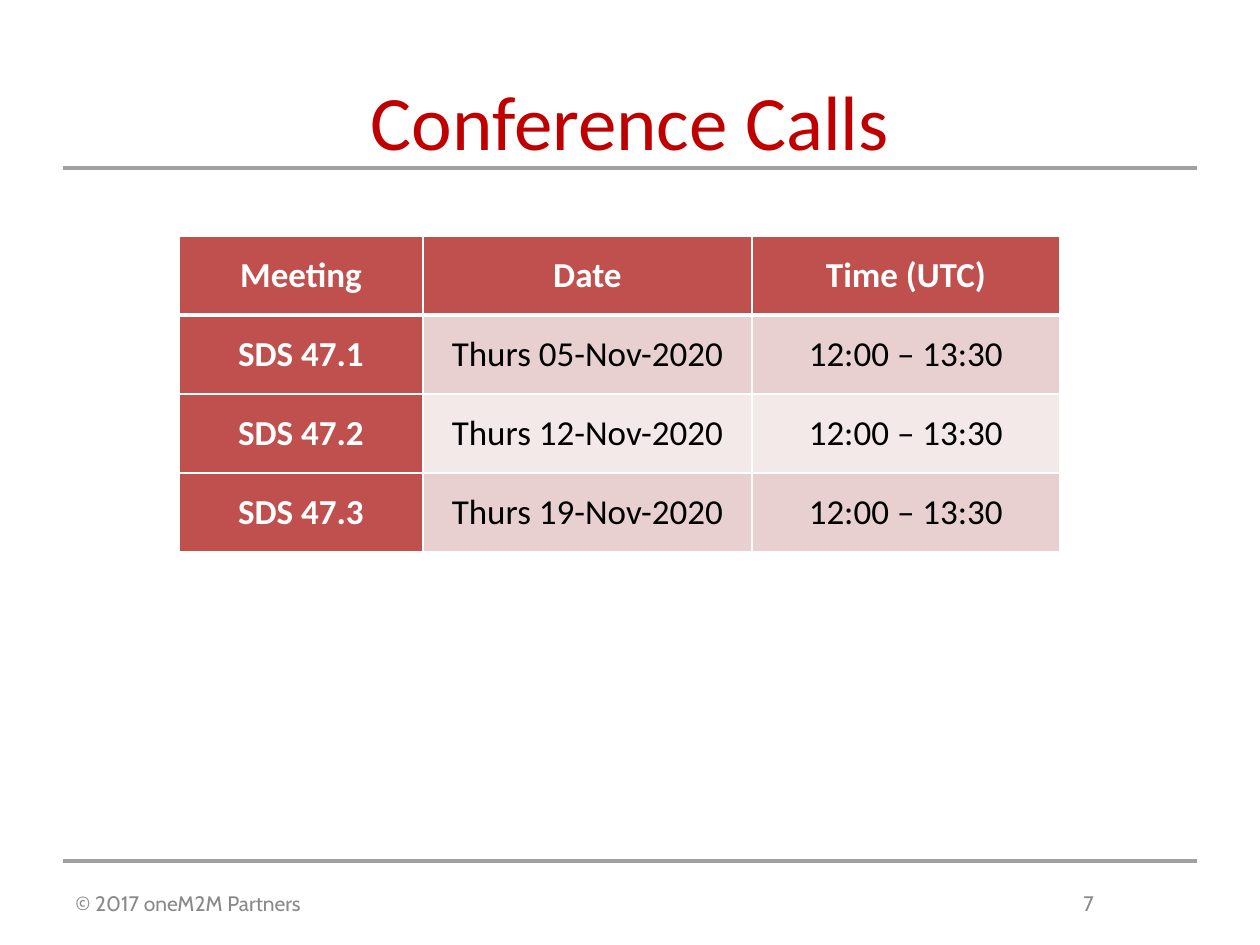
from dataclasses import dataclass

from lxml.etree import SubElement
from pptx import Presentation
from pptx.dml.color import RGBColor
from pptx.enum.shapes import MSO_CONNECTOR
from pptx.enum.text import MSO_ANCHOR, PP_ALIGN
from pptx.oxml.ns import qn
from pptx.slide import Slide
from pptx.table import _Cell
from pptx.text.text import TextFrame
from pptx.util import Emu, Pt

PIXELS_PER_INCH = 126
WHITE, BLACK, RED, GREY = "FFFFFF", "000000", "C0504D", "898989"
BANDS = ("E8D0D0", "F4E9E9")
COLUMN_WIDTHS = (244, 329, 308)
ROW_HEIGHT = 79
MEETINGS = (
    ("Meeting", "Date", "Time (UTC)"),
    ("SDS 47.1", "Thurs 05-Nov-2020", "12:00 – 13:30"),
    ("SDS 47.2", "Thurs 12-Nov-2020", "12:00 – 13:30"),
    ("SDS 47.3", "Thurs 19-Nov-2020", "12:00 – 13:30"),
)


@dataclass(frozen=True)
class TextStyle:
    size: int
    color: str
    name: str = "Calibri"
    bold: bool = False
    alignment: PP_ALIGN = PP_ALIGN.CENTER


@dataclass(frozen=True)
class Rule:
    left: int
    right: int
    top: int


RULES = (Rule(63, 1197, 168), Rule(63, 1197, 861))


def px(length: int) -> Emu:
    return Emu(round(length * 914400 / PIXELS_PER_INCH))


def rgb(color: str) -> RGBColor:
    return RGBColor.from_string(color)


def apply_format(target: object, values: dict) -> None:
    for name, value in values.items():
        setattr(target, name, value)


def write_text(frame: TextFrame, text: str, style: TextStyle) -> None:
    para = frame.paragraphs[0]
    para.alignment = style.alignment
    span = para.add_run()
    span.text = text
    apply_format(span.font, {"name": style.name, "size": Pt(style.size), "bold": style.bold})
    span.font.color.rgb = rgb(style.color)


def draw_rule(page: Slide, rule: Rule) -> None:
    line = page.shapes.add_connector(
        MSO_CONNECTOR.STRAIGHT, px(rule.left), px(rule.top), px(rule.right), px(rule.top)
    )
    line.line.color.rgb = rgb("A0A0A3")
    line.line.width = Pt(1.75)
    SubElement(line._element.spPr, qn("a:effectLst"))


def draw_title(page: Slide, text: str) -> None:
    title = page.shapes.title
    apply_format(title, {"left": px(63), "top": px(63), "width": px(1134), "height": px(158)})
    apply_format(title.text_frame, {"vertical_anchor": MSO_ANCHOR.TOP, "margin_top": px(10)})
    write_text(title.text_frame, text, TextStyle(44, "C00000"))


def draw_footer(page: Slide, notice: str, number: int) -> None:
    box = page.shapes.add_textbox(px(63), px(861), px(1134), px(84))
    frame = box.text_frame
    apply_format(frame, {"word_wrap": True, "vertical_anchor": MSO_ANCHOR.MIDDLE})
    properties = frame.paragraphs[0]._p.get_or_add_pPr()
    tabs = SubElement(properties, qn("a:tabLst"))
    SubElement(tabs, qn("a:tab"), pos=str(px(1008)), algn="l")
    style = TextStyle(12, GREY, "Cabin", alignment=PP_ALIGN.LEFT)
    write_text(frame, f"{notice}\t{number}", style)


def draw_borders(cell: _Cell, widths: dict[str, int]) -> None:
    properties = cell._tc.get_or_add_tcPr()
    for side, width in widths.items():
        border = SubElement(properties, qn(f"a:ln{side}"), w=str(Pt(width)))
        fill = SubElement(border, qn("a:solidFill"))
        SubElement(fill, qn("a:srgbClr"), val=WHITE)


def draw_cell(cell: _Cell, text: str, row: int, column: int) -> None:
    heading = row == 0 or column == 0
    draw_borders(cell, {"L": 1, "R": 1, "T": 3 if row == 1 else 1, "B": 3 if row == 0 else 1})
    cell.fill.solid()
    cell.fill.fore_color.rgb = rgb(RED if heading else BANDS[(row - 1) % 2])
    apply_format(cell, {
        "vertical_anchor": MSO_ANCHOR.MIDDLE,
        "margin_left": px(9),
        "margin_right": px(9),
        "margin_top": 0,
        "margin_bottom": 0,
    })
    write_text(cell.text_frame, text, TextStyle(20, WHITE if heading else BLACK, bold=heading))


def draw_meetings(page: Slide) -> None:
    table = page.shapes.add_table(
        len(MEETINGS), len(COLUMN_WIDTHS), px(179), px(236),
        px(sum(COLUMN_WIDTHS)), px(ROW_HEIGHT * len(MEETINGS)),
    ).table
    apply_format(table, {"first_row": True, "first_col": True, "horz_banding": True})
    for column, width in enumerate(COLUMN_WIDTHS):
        table.columns[column].width = px(width)
    for row, texts in enumerate(MEETINGS):
        table.rows[row].height = px(ROW_HEIGHT)
        for column, text in enumerate(texts):
            draw_cell(table.cell(row, column), text, row, column)


def main() -> None:
    deck = Presentation()
    apply_format(deck, {"slide_width": px(1260), "slide_height": px(945)})
    page = deck.slides.add_slide(deck.slide_layouts[5])
    for rule in RULES:
        draw_rule(page, rule)
    draw_title(page, "Conference Calls")
    draw_footer(page, "© 2017 oneM2M Partners", 7)
    draw_meetings(page)
    deck.save("out.pptx")


if __name__ == "__main__":
    main()
